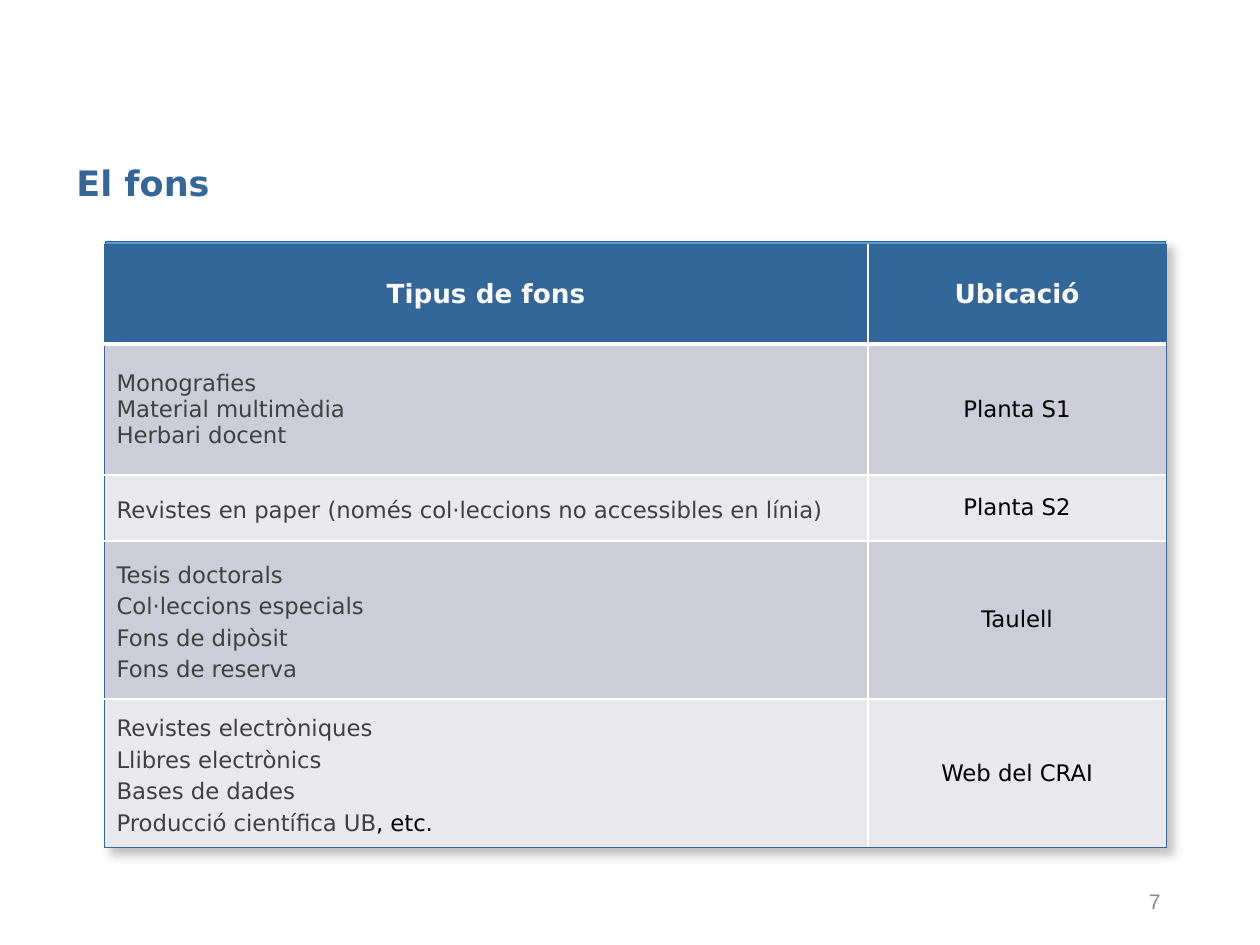
"""Build the slide listing each type of library holding and where it is kept."""
import lxml.etree
import pptx
import pptx.dml.color
import pptx.enum.shapes
import pptx.enum.text
import pptx.oxml.ns
import pptx.util

PX = pptx.util.Inches(1) / 126
COLOURS = {
    "blue": "336699", "light_blue": "5B9BD5", "white": "FFFFFF", "black": "000000",
    "dark_grey": "404040", "grey": "898989", "shadow": "646464",
    "band_dark": "CDCDDA", "band_light": "E8E8ED",
}
ALIGN = pptx.enum.text.PP_ALIGN
MIDDLE = pptx.enum.text.MSO_ANCHOR.MIDDLE


def px(*lengths):
    return [pptx.util.Emu(round(length * PX)) for length in lengths]


def write(paragraph, text, colour, align=ALIGN.LEFT, spacing=None, **font_values):
    for name, value in {"alignment": align, "line_spacing": spacing}.items():
        setattr(paragraph, name, value)
    run = paragraph.add_run()
    run.text = text
    values = {"name": "DejaVu Sans", "size": pptx.util.Pt(13), "bold": False} | font_values
    for name, value in values.items():
        setattr(run.font, name, value)
    run.font.color.rgb = pptx.dml.color.RGBColor.from_string(COLOURS[colour])


presentation = pptx.Presentation()
presentation.slide_width, presentation.slide_height = px(1260, 945)
slide = presentation.slides.add_slide(presentation.slide_layouts[6])

backing = slide.shapes.add_shape(
    pptx.enum.shapes.MSO_SHAPE.RECTANGLE, *px(105, 242, 1061, 606))
backing.fill.solid()
backing.fill.fore_color.rgb = pptx.dml.color.RGBColor.from_string(COLOURS["light_blue"])
backing.line.color.rgb = pptx.dml.color.RGBColor.from_string(COLOURS["blue"])
backing.line.width = pptx.util.Pt(0.5)
backing.shadow.inherit = False
effects = backing._element.spPr.find(pptx.oxml.ns.qn("a:effectLst"))
effects.append(pptx.oxml.parse_xml(
    f'<a:outerShdw {pptx.oxml.ns.nsdecls("a")} blurRad="63500" dist="63500" dir="2700000" '
    f'algn="tl" rotWithShape="0"><a:srgbClr val="{COLOURS["shadow"]}">'
    '<a:alpha val="40000"/></a:srgbClr></a:outerShdw>'))

page_number = slide.shapes.add_textbox(*px(890, 876, 283, 50)).text_frame
page_number.word_wrap = True
page_number.vertical_anchor = MIDDLE
write(page_number.paragraphs[0], "7", "grey", ALIGN.RIGHT, name="Arial", size=pptx.util.Pt(12))

title = slide.shapes.add_textbox(*px(64, 160, 1121, 54)).text_frame
title.word_wrap = True
write(title.paragraphs[0], "El fons", "blue", spacing=0.9, size=pptx.util.Pt(20), bold=True)

column_widths = [764, 298]
row_heights = [100, 131, 66, 158, 149]
holdings = [
    (["Tipus de fons"], "Ubicació", None),
    (["Monografies", "Material multimèdia", "Herbari docent"], "Planta S1", None),
    (["Revistes en paper (només col·leccions no accessibles en línia)"], "Planta S2", 18),
    (["Tesis doctorals", "Col·leccions especials", "Fons de dipòsit", "Fons de reserva"],
     "Taulell", 18),
    (["Revistes electròniques", "Llibres electrònics", "Bases de dades",
      "Producció científica UB"], "Web del CRAI", 18),
]
table = slide.shapes.add_table(
    len(row_heights), len(column_widths),
    *px(104, 244, sum(column_widths), sum(row_heights))).table
for column, width in zip(table.columns, px(*column_widths)):
    column.width = width
for row, height in zip(table.rows, px(*row_heights)):
    row.height = height

last_row = len(holdings) - 1
for row_index, (kinds, location, spacing) in enumerate(holdings):
    header = row_index == 0
    band = "blue" if header else ("band_light", "band_dark")[row_index % 2]
    for column_index, lines in enumerate((kinds, [location])):
        cell = table.cell(row_index, column_index)
        cell.vertical_anchor = MIDDLE
        outer, inner = ("blue", 0.5), ("white", 1)
        divider = ("white", 3)
        borders = {
            "lnL": inner if column_index else outer,
            "lnR": outer if column_index else inner,
            "lnT": outer if header else divider if row_index == 1 else inner,
            "lnB": divider if header else outer if row_index == last_row else inner,
        }
        for side, (colour, points) in borders.items():
            cell._tc.get_or_add_tcPr().append(pptx.oxml.parse_xml(
                f'<a:{side} {pptx.oxml.ns.nsdecls("a")} w="{pptx.util.Pt(points)}">'
                f'<a:solidFill><a:srgbClr val="{COLOURS[colour]}"/></a:solidFill></a:{side}>'))
        cell.fill.solid()
        cell.fill.fore_color.rgb = pptx.dml.color.RGBColor.from_string(COLOURS[band])

        kind_column = column_index == 0 and not header
        colour = "white" if header else "dark_grey" if kind_column else "black"
        for line_index, line in enumerate(lines):
            frame = cell.text_frame
            paragraph = frame.add_paragraph() if line_index else frame.paragraphs[0]
            write(paragraph, line, colour,
                  ALIGN.LEFT if kind_column else ALIGN.CENTER,
                  pptx.util.Pt(spacing) if kind_column and spacing else None,
                  size=pptx.util.Pt(15 if header else 13), bold=header)

closing_line = table.cell(last_row, 0).text_frame.paragraphs[-1]
write(closing_line, ", etc.", "black", spacing=pptx.util.Pt(18))

presentation.save("out.pptx")
